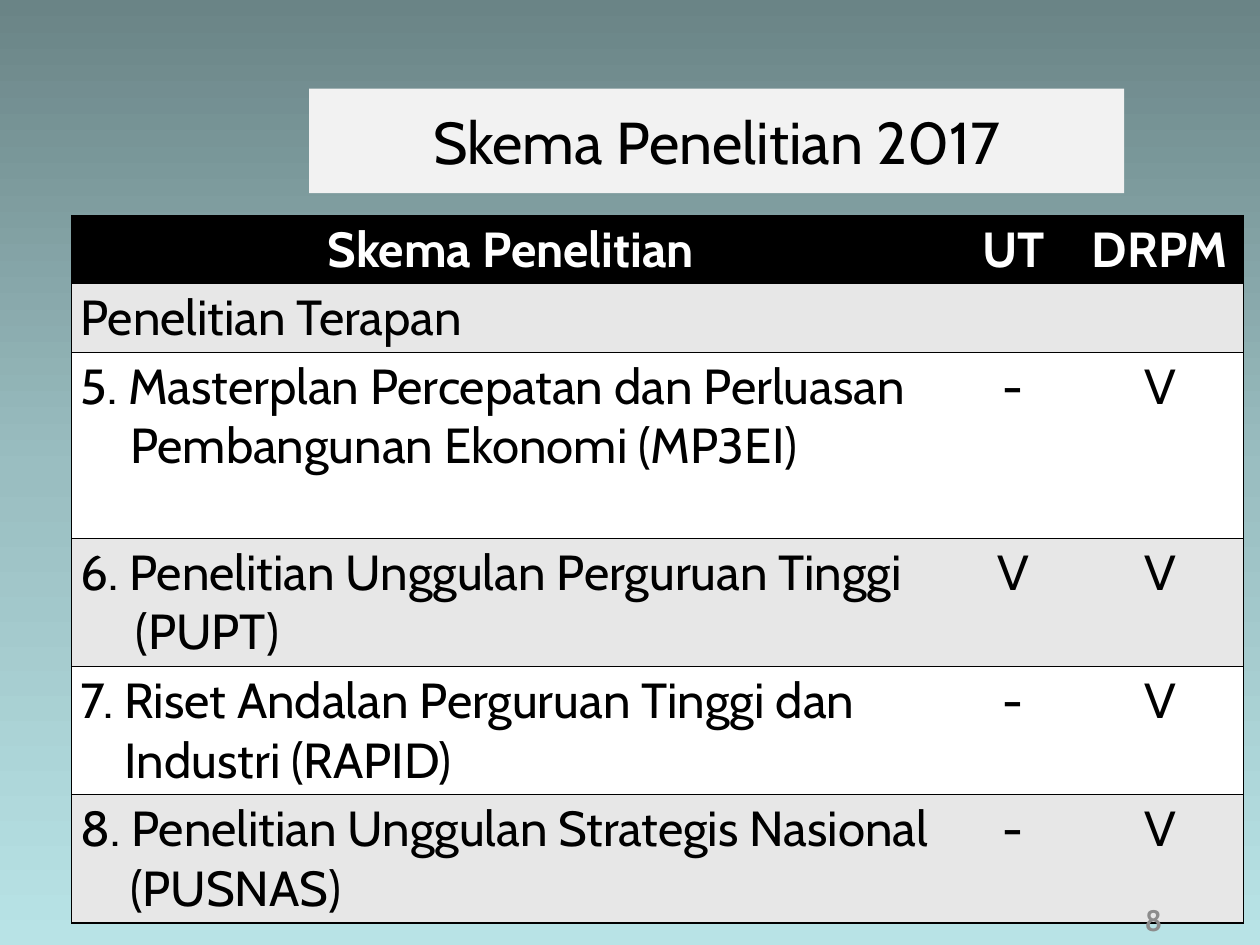
"""Build the slide listing the 2017 applied research schemes."""
from pptx import Presentation, util as u
from pptx.dml.color import RGBColor
from pptx.enum import shapes, text
from pptx.oxml import parse_xml
from pptx.oxml.ns import nsdecls, qn

TITLE = "Skema Penelitian 2017"
PAGE_NUMBER = "8"
HEADER = ("Skema Penelitian", "UT", "DRPM")
SCHEMES = [
    ("Penelitian Terapan", "", ""),
    ("5. Masterplan Percepatan dan Perluasan Pembangunan Ekonomi (MP3EI)", "-", "V"),
    ("6. Penelitian Unggulan Perguruan Tinggi (PUPT)", "V", "V"),
    ("7. Riset Andalan Perguruan Tinggi dan Industri (RAPID)", "-", "V"),
    ("8. Penelitian Unggulan Strategis Nasional (PUSNAS)", "-", "V"),
]
HANGS = (0, 0, 40.5, 45, 36, 40.5)
COLUMN_WIDTHS = (714.2, 102.2, 136.2)
ROW_HEIGHTS = (55.4, 55.4, 151.2, 103, 103, 103)
BACKDROP = ((0, "6A8486"), (50, "9ABEC1"), (100, "B8E3E6"))

FONT = "Cabin"
BLACK = RGBColor(0x00, 0x00, 0x00)
WHITE = RGBColor(0xFF, 0xFF, 0xFF)
BAND = RGBColor(0xE7, 0xE7, 0xE7)
PANEL = RGBColor(0xF2, 0xF2, 0xF2)
GRAY = RGBColor(0x8C, 0x8C, 0x8C)


def write(frame, wording, size=40, color=BLACK, bold=False, centered=True, hang=0):
    frame.word_wrap = True
    line = frame.paragraphs[0]
    line.alignment = text.PP_ALIGN.CENTER if centered else text.PP_ALIGN.LEFT
    if hang:
        props = line._p.get_or_add_pPr()
        props.set("marL", str(u.Pt(hang)))
        props.set("indent", str(-u.Pt(hang)))
    run = line.add_run()
    run.text = wording
    run.font.name, run.font.size = FONT, u.Pt(size)
    run.font.bold, run.font.color.rgb = bold, color


def paint_backdrop(slide):
    fill = slide.background.fill
    fill.gradient()
    fill.gradient_angle = 270
    stops = next(slide.element.iter(qn("a:gsLst")))
    for stop in list(stops):
        stops.remove(stop)
    for percent, color in BACKDROP:
        stops.append(parse_xml(
            f'<a:gs {nsdecls("a")} pos="{percent * 1000}"><a:srgbClr val="{color}"/></a:gs>'))


def rule_cell(cell, column):
    ruled = {"L": column == 0, "R": column == len(HEADER) - 1, "T": True, "B": True}
    for side, visible in ruled.items():
        paint = f'<a:solidFill><a:srgbClr val="{BLACK}"/></a:solidFill>' if visible else "<a:noFill/>"
        cell._tc.get_or_add_tcPr().append(parse_xml(
            f'<a:ln{side} {nsdecls("a")} w="{u.Pt(1)}">{paint}</a:ln{side}>'))


def add_title(slide):
    panel = slide.shapes.add_shape(
        shapes.MSO_SHAPE.RECTANGLE, u.Pt(251.3), u.Pt(72), u.Pt(662.4), u.Pt(85))
    panel.shadow.inherit = False
    panel.fill.solid()
    panel.fill.fore_color.rgb = PANEL
    panel.line.fill.background()
    panel.text_frame.vertical_anchor = text.MSO_ANCHOR.MIDDLE
    write(panel.text_frame, TITLE, size=48)


def add_schemes(slide):
    rows = [HEADER] + SCHEMES
    grid = slide.shapes.add_table(
        len(rows), len(HEADER), u.Pt(58.2), u.Pt(175),
        u.Pt(sum(COLUMN_WIDTHS)), u.Pt(sum(ROW_HEIGHTS))).table
    for column, width in enumerate(COLUMN_WIDTHS):
        grid.columns[column].width = u.Pt(width)
    for row, (entries, height) in enumerate(zip(rows, ROW_HEIGHTS)):
        grid.rows[row].height = u.Pt(height)
        heading = row == 0
        for column, entry in enumerate(entries):
            cell = grid.cell(row, column)
            rule_cell(cell, column)
            cell.fill.solid()
            cell.fill.fore_color.rgb = BLACK if heading else BAND if row % 2 else WHITE
            if entry:
                write(cell.text_frame, entry, color=WHITE if heading else BLACK,
                      bold=heading, centered=heading or column > 0,
                      hang=HANGS[row] if column == 0 else 0)


def add_page_number(slide):
    corner = slide.shapes.add_textbox(u.Pt(818), u.Pt(727.2), u.Pt(239), u.Pt(41))
    corner.text_frame.vertical_anchor = text.MSO_ANCHOR.MIDDLE
    write(corner.text_frame, PAGE_NUMBER, size=24, color=GRAY, bold=True)


def main():
    deck = Presentation()
    deck.slide_width, deck.slide_height = u.Pt(1024), u.Pt(768)
    slide = deck.slides.add_slide(deck.slide_layouts[6])
    paint_backdrop(slide)
    add_title(slide)
    add_schemes(slide)
    add_page_number(slide)
    deck.save("out.pptx")


if __name__ == "__main__":
    main()
